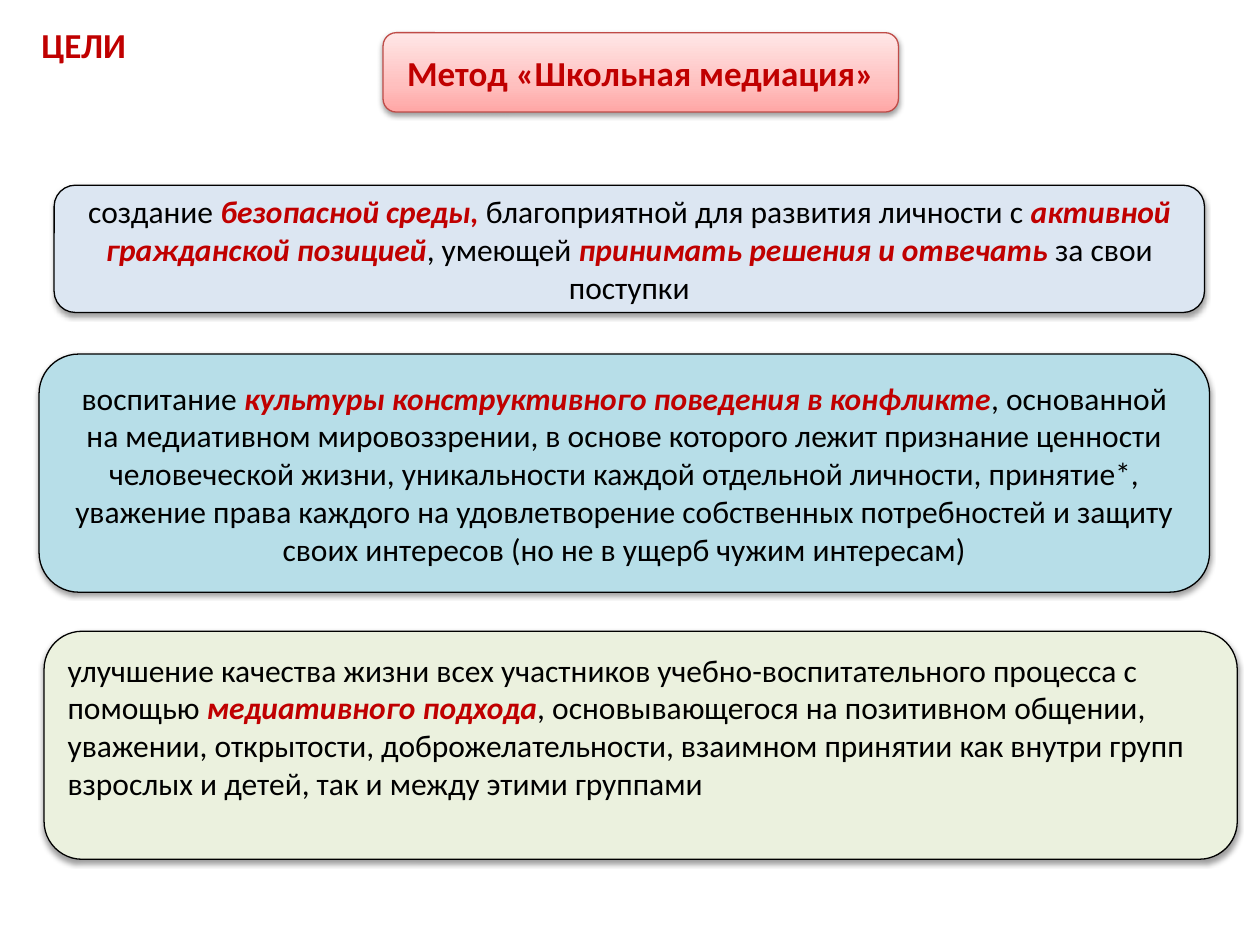
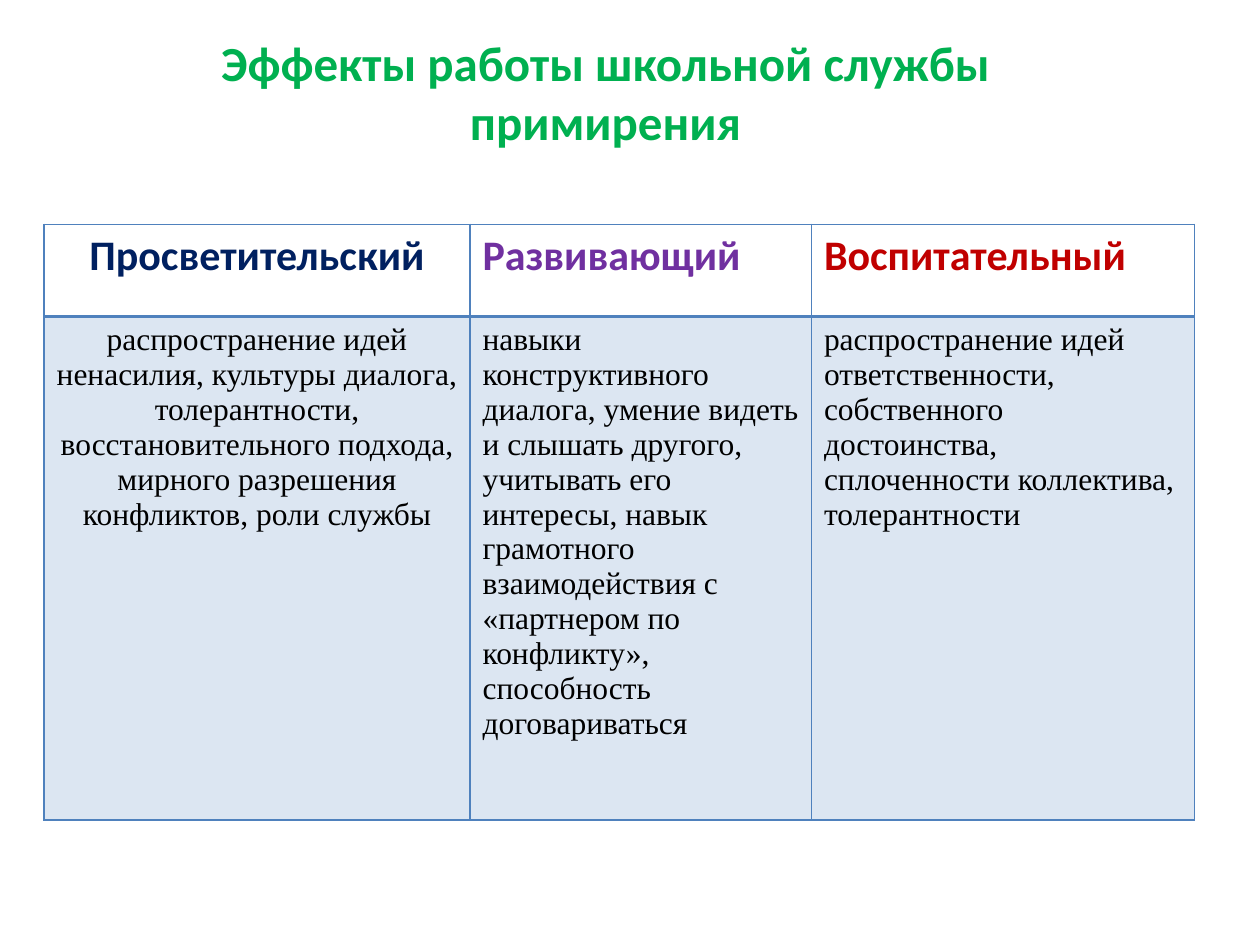
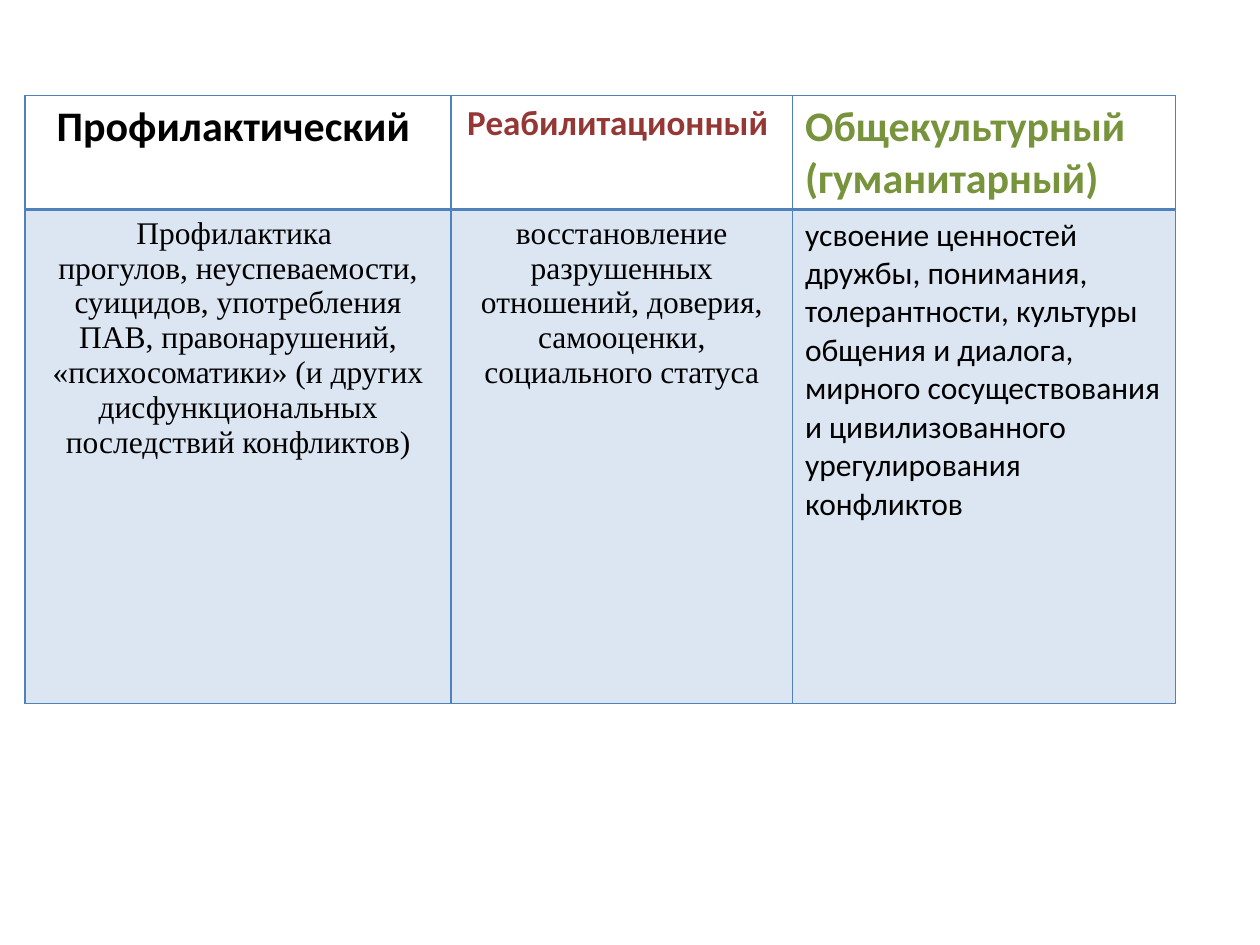
from dataclasses import dataclass

from lxml.etree import SubElement as Sub
from pptx import Presentation
from pptx.dml.color import RGBColor as Rgb
from pptx.enum.shapes import MSO_SHAPE as Form
from pptx.enum.text import MSO_ANCHOR as Anchor, PP_ALIGN as Align
from pptx.oxml.ns import qn
from pptx.util import Inches, Pt

COLS, ROWS = 100, 75
WIDE, HIGH = Inches(10), Inches(7.5)


@dataclass(frozen=True)
class Theme:
    """Colours, fonts and type sizes of the deck."""
    sans: str = "Calibri"
    serif: str = "Times New Roman"
    ink: str = "000000"
    red: str = "C00000"
    green: str = "00B050"
    navy: str = "002060"
    plum: str = "7030A0"
    brick: str = "953735"
    olive: str = "77933C"
    pale: str = "DCE6F2"
    aqua: str = "B7DEE8"
    lime: str = "EBF1DE"
    rose: str = "BF4C48"
    rule: str = "4F81BD"
    blush: tuple[tuple[int, str], ...] = (
        (0, "FFA6A5"), (35, "FFC0BF"), (100, "FFE7E7"))
    body: int = 18
    label: int = 20
    head: int = 24
    title: int = 28


T = Theme()


@dataclass(frozen=True)
class Spot:
    """A place on the grid, in columns and rows."""
    col: float
    row: float
    wide: float
    high: float

    def box(self) -> tuple[int, int, int, int]:
        """Return left, top, width and height as lengths."""
        return (across(self.col), down(self.row),
                across(self.wide), down(self.high))


@dataclass(frozen=True)
class Words:
    """Text with its type; parts between bars are stressed."""
    text: str
    size: int = T.body
    hue: str = T.ink
    bold: bool = False
    font: str = T.sans
    align: Align = Align.CENTER


@dataclass(frozen=True)
class Card:
    """A rounded box with text; no fill means the blush gradient."""
    spot: Spot
    words: Words
    fill: str | None = None
    edge: str = T.ink
    foot: float = 0.5


@dataclass(frozen=True)
class Effect:
    """One table column: its heading and its body."""
    head: Words
    body: Words


def across(cols: float) -> int:
    """Turn grid columns into a length."""
    return round(WIDE * cols / COLS)


def down(rows: float) -> int:
    """Turn grid rows into a length."""
    return round(HIGH * rows / ROWS)


def write(frame, words: Words) -> None:
    """Write the words into a text frame."""
    frame.word_wrap = True
    for num, line in enumerate(words.text.split("\n")):
        para = frame.add_paragraph() if num else frame.paragraphs[0]
        para.alignment = words.align
        font = para.font
        font.name, font.size, font.bold = words.font, Pt(words.size), words.bold
        font.color.rgb = Rgb.from_string(words.hue)
        for turn, part in enumerate(line.split("|")):
            run = para.add_run()
            run.text = part
            if turn % 2:
                run.font.bold = run.font.italic = True
                run.font.color.rgb = Rgb.from_string(T.red)


def tint(node, hue: str):
    """Add an RGB colour below an XML node."""
    return Sub(node, qn("a:srgbClr"), val=hue)


def blend(shape) -> None:
    """Fill a shape with the blush gradient, light at the top."""
    shape.fill.gradient()
    shape.fill.gradient_angle = 90
    stops = shape.element.spPr.find(".//" + qn("a:gsLst"))
    stops.clear()
    for pos, hue in T.blush:
        tint(Sub(stops, qn("a:gs"), pos=str(pos * 1000)), hue)


def shade(shape) -> None:
    """Give a shape a soft shadow below it."""
    shape.shadow.inherit = False
    node = Sub(shape.element.spPr.find(qn("a:effectLst")), qn("a:outerShdw"),
               blurRad=str(Pt(3.1)), dist=str(Pt(1.6)), dir="5400000",
               rotWithShape="0")
    Sub(tint(node, T.ink), qn("a:alpha"), val="38000")


def draw_card(slide, card: Card) -> None:
    """Draw a rounded box."""
    shape = slide.shapes.add_shape(Form.ROUNDED_RECTANGLE, *card.spot.box())
    if card.fill:
        shape.fill.solid()
        shape.fill.fore_color.rgb = Rgb.from_string(card.fill)
    else:
        blend(shape)
    shape.line.color.rgb = Rgb.from_string(card.edge)
    shape.line.width = Pt(0.75)
    shade(shape)
    frame = shape.text_frame
    frame.vertical_anchor = Anchor.MIDDLE
    frame.margin_bottom = down(card.foot)
    write(frame, card.words)


def draw_text(slide, spot: Spot, words: Words) -> None:
    """Draw a plain text box."""
    write(slide.shapes.add_textbox(*spot.box()).text_frame, words)


def frame_cell(cell, top: float, base: float) -> None:
    """Draw the four borders of a cell."""
    props = cell._tc.get_or_add_tcPr()
    for side, width in zip("LRTB", (1, 1, top, base)):
        line = Sub(props, qn(f"a:ln{side}"), w=str(Pt(width)))
        tint(Sub(line, qn("a:solidFill")), T.rule)


def draw_table(slide, col: float, row: float, highs: tuple[float, float],
               items: tuple[Effect, ...]) -> None:
    """Draw a table with one column for each effect."""
    wides = (33.8, 27.1, 30.4)
    spot = Spot(col, row, sum(wides), sum(highs))
    grid = slide.shapes.add_table(2, len(items), *spot.box()).table
    grid.first_row = grid.horz_banding = False
    for band, high in zip(grid.rows, highs):
        band.height = down(high)
    for num, (item, wide) in enumerate(zip(items, wides)):
        grid.columns[num].width = across(wide)
        head, body = grid.cell(0, num), grid.cell(1, num)
        frame_cell(head, 1, 2)
        frame_cell(body, 2, 1)
        head.fill.background()
        body.fill.solid()
        body.fill.fore_color.rgb = Rgb.from_string(T.pale)
        write(head.text_frame, item.head)
        write(body.text_frame, item.body)


def head(text: str, hue: str, align: Align = Align.LEFT,
         size: int = T.head) -> Words:
    """Return a bold heading."""
    return Words(text, size, hue, True, align=align)


def body(text: str, align: Align = Align.LEFT, font: str = T.serif) -> Words:
    """Return body text of a table."""
    return Words(text, font=font, align=align)


CARDS = (
    Card(Spot(30.4, 2.6, 40.9, 6.3),
         head("Метод «Школьная медиация»", T.red, Align.CENTER, T.label),
         edge=T.rose),
    Card(Spot(4.3, 14.7, 91.3, 10.1),
         Words("создание |безопасной среды, |благоприятной для развития "
               "личности с |активной гражданской позицией|, умеющей "
               "|принимать решения и отвечать| за свои поступки"), T.pale),
    Card(Spot(3.1, 28.1, 92.9, 18.9),
         Words("воспитание |культуры конструктивного поведения в конфликте|, "
               "основанной на медиативном мировоззрении, в основе которого "
               "лежит признание ценности человеческой жизни, уникальности "
               "каждой отдельной личности, принятие*, уважение права каждого "
               "на удовлетворение собственных потребностей и защиту своих "
               "интересов (но не в ущерб чужим интересам)"), T.aqua),
    Card(Spot(3.5, 50.1, 94.7, 18.1),
         Words("улучшение качества жизни всех участников "
               "учебно-воспитательного процесса с помощью |медиативного "
               "подхода|, основывающегося на позитивном общении, уважении, "
               "открытости, доброжелательности, взаимном принятии как внутри "
               "групп взрослых и детей, так и между этими группами",
               align=Align.LEFT), T.lime, foot=3.5),
)

GROWTH = (
    Effect(head("Просветительский", T.navy, Align.CENTER),
           body("распространение идей ненасилия, культуры диалога, "
                "толерантности, восстановительного подхода, мирного "
                "разрешения конфликтов, роли службы", Align.CENTER)),
    Effect(head("Развивающий", T.plum),
           body("навыки конструктивного диалога, умение видеть и слышать "
                "другого, учитывать его интересы, навык грамотного "
                "взаимодействия с «партнером по конфликту», способность "
                "договариваться")),
    Effect(head("Воспитательный", T.red),
           body("распространение идей ответственности, собственного "
                "достоинства, сплоченности коллектива, толерантности")),
)

CARE = (
    Effect(head("Профилактический ", T.ink, Align.CENTER),
           body("Профилактика \nпрогулов, неуспеваемости, суицидов, "
                "употребления ПАВ, правонарушений, «психосоматики» (и других "
                "дисфункциональных последствий конфликтов)", Align.CENTER)),
    Effect(head("Реабилитационный ", T.brick, Align.CENTER, T.label),
           body("восстановление разрушенных отношений, доверия, самооценки, "
                "социального статуса", Align.CENTER)),
    Effect(head("Общекультурный (гуманитарный)", T.olive),
           body("усвоение ценностей дружбы, понимания, толерантности, "
                "культуры общения и диалога, мирного сосуществования и "
                "цивилизованного урегулирования конфликтов", font=T.sans)),
)


def main() -> None:
    """Build and save the deck."""
    deck = Presentation()
    deck.slide_width, deck.slide_height = WIDE, HIGH
    goals, gains, more = (deck.slides.add_slide(deck.slide_layouts[6])
                          for _ in range(3))
    for card in CARDS:
        draw_card(goals, card)
    draw_text(goals, Spot(2.3, 1.4, 32, 4.4),
              head("ЦЕЛИ", T.red, size=T.label))
    draw_text(gains, Spot(5.9, 2.1, 84.3, 15.1),
              head("Эффекты работы школьной службы примирения", T.green,
                   Align.CENTER, T.title))
    draw_table(gains, 3.5, 17.8, (7.3, 40), GROWTH)
    draw_table(more, 2, 7.6, (9.05, 39.2), CARE)
    deck.save("out.pptx")


if __name__ == "__main__":
    main()
